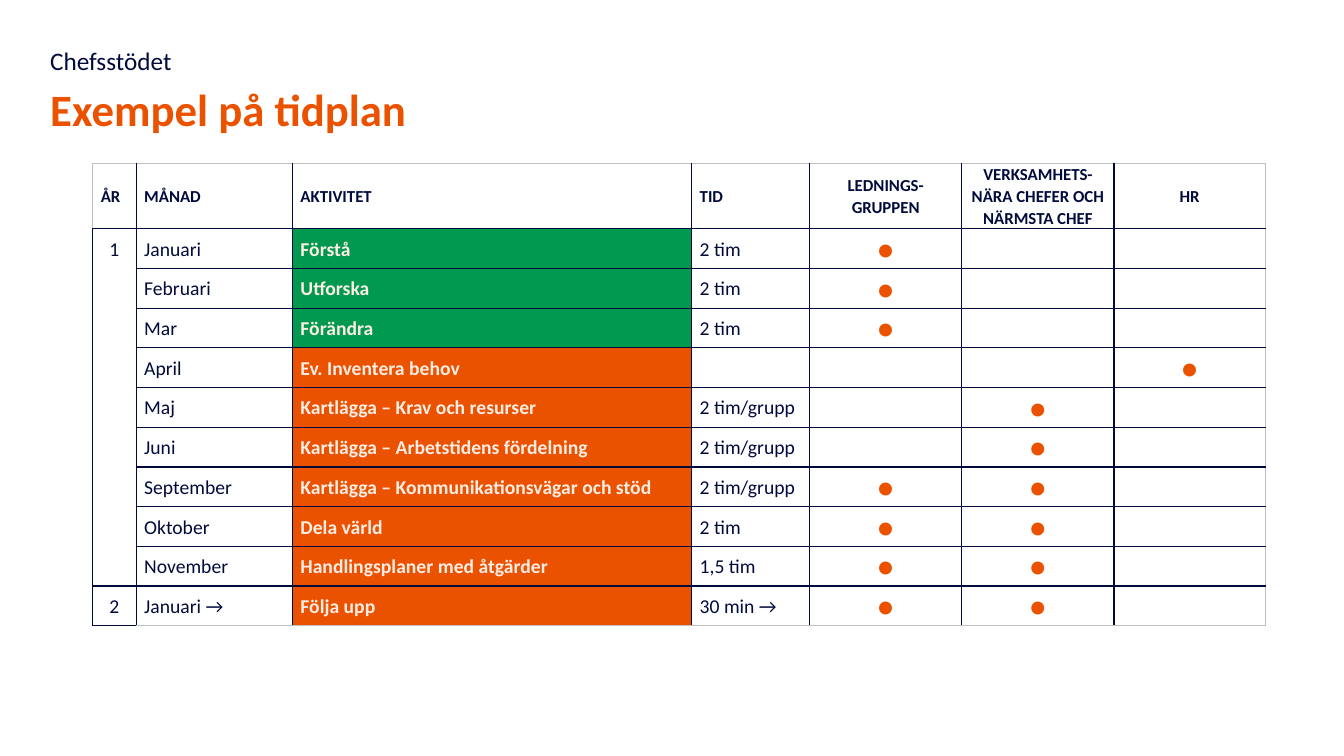
import pptx
import pptx.util
import pptx.dml.color
import pptx.enum.text
import pptx.oxml.ns
import lxml.etree

PX = 9144
NAVY, ORANGE, GREEN = "000B3C", "EB5200", "00994F"
CREAM, GREY = "FDEDE5", "BFBFBF"
FONT = "Calibri"
MID = pptx.enum.text.MSO_ANCHOR.MIDDLE
CENTER = pptx.enum.text.PP_ALIGN.CENTER

COLS = [43, 155, 396, 117, 151, 151, 150]
HEADS = ["ÅR", "MÅNAD", "AKTIVITET", "TID", "LEDNINGS-GRUPPEN",
         "VERKSAMHETS-NÄRA CHEFER OCH NÄRMSTA CHEF", "HR"]
# Year, month, activity, time, columns that carry a dot
PLAN = [
    ("1", "Januari", "Förstå", "2 tim", [4]),
    ("", "Februari", "Utforska", "2 tim", [4]),
    ("", "Mar", "Förändra", "2 tim", [4]),
    ("", "April", "Ev. Inventera behov", "", [6]),
    ("", "Maj", "Kartlägga – Krav och resurser", "2 tim/grupp", [5]),
    ("", "Juni", "Kartlägga – Arbetstidens fördelning", "2 tim/grupp", [5]),
    ("", "September", "Kartlägga – Kommunikationsvägar och stöd",
     "2 tim/grupp", [4, 5]),
    ("", "Oktober", "Dela värld", "2 tim", [4, 5]),
    ("", "November", "Handlingsplaner med åtgärder", "1,5 tim", [4, 5]),
    ("2", "Januari →", "Följa upp", "30 min →", [4, 5]),
]
LAST = len(PLAN)


def px(n):
    return pptx.util.Emu(round(n * PX))


def color(code):
    return pptx.dml.color.RGBColor.from_string(code)


def style(font, size, code, bold=False):
    font.name = FONT
    font.size = pptx.util.Pt(size)
    font.bold = bold
    font.color.rgb = color(code)


def label(slide, box, text, size, code, bold=False):
    shape = slide.shapes.add_textbox(*map(px, box))
    frame = shape.text_frame
    frame.word_wrap = True
    frame.text = text
    style(frame.paragraphs[0].runs[0].font, size, code, bold)


def edge(cell, side, code):
    """Draw one border; no colour means no line."""
    props = cell._tc.get_or_add_tcPr()
    qn = pptx.oxml.ns.qn
    width = 6350 if code == GREY else 12700
    line = lxml.etree.SubElement(props, qn("a:ln" + side), w=str(width))
    if code:
        fill = lxml.etree.SubElement(line, qn("a:solidFill"))
        lxml.etree.SubElement(fill, qn("a:srgbClr"), val=code)
    else:
        lxml.etree.SubElement(line, qn("a:noFill"))


def borders(cell, row, col):
    inner = col == 0 and 1 <= row < LAST - 1
    edge(cell, "L", GREY if row == 0 and col == 0 else NAVY)
    edge(cell, "R", GREY if col == len(COLS) - 1 else NAVY)
    edge(cell, "T", GREY if row == 0 else
         None if col == 0 and 1 < row < LAST else NAVY)
    edge(cell, "B", None if inner else
         GREY if row == LAST and col else NAVY)


def write(cell, text, size, code, bold, center):
    cell.vertical_anchor = MID
    cell.margin_left = cell.margin_right = px(8)
    cell.margin_top = cell.margin_bottom = 0
    cell.text_frame.text = text
    para = cell.text_frame.paragraphs[0]
    para.line_spacing = 1.07
    para.space_after = pptx.util.Pt(8)
    if center:
        para.alignment = CENTER
    if text:
        style(para.runs[0].font, size, code, bold)
    else:
        para.font.size = pptx.util.Pt(size)


def plan(slide, box, head):
    left, top, width, height = box
    shape = slide.shapes.add_table(LAST + 1, len(COLS), *map(px, box))
    table = shape.table
    table.first_row = table.horz_banding = False
    for col, wide in zip(table.columns, COLS):
        col.width = px(wide)
    for row in table.rows:
        row.height = px((height - head) / LAST)
    table.rows[0].height = px(head)

    # Every cell gets its words, borders and fill
    for r in range(LAST + 1):
        for c in range(len(COLS)):
            cell = table.cell(r, c)
            borders(cell, r, c)
            cell.fill.background()
            if r == 0:
                write(cell, HEADS[c], 12, NAVY, True, c > 3)
                continue
            item = PLAN[r - 1]
            if c > 3:
                dot = c in item[4]
                write(cell, "●" if dot else "", 20 if dot else 14,
                      ORANGE, False, True)
            elif c == 2:
                write(cell, item[c], 14, CREAM, True, False)
                cell.fill.solid()
                cell.fill.fore_color.rgb = color(GREEN if r < 4 else ORANGE)
            else:
                write(cell, item[c], 14, NAVY, False, c == 0)
    table.cell(LAST - 3, 0).merge(table.cell(LAST - 1, 0))


def header(slide, box):
    left, top, width, height = box
    small = 36
    label(slide, (left, top, width, small), "Chefsstödet", 18, NAVY)
    label(slide, (left, top + small, width, height - small),
          "Exempel på tidplan", 32, ORANGE, True)


def main():
    deck = pptx.Presentation()
    deck.slide_width, deck.slide_height = px(1333), px(750)
    slide = deck.slides.add_slide(deck.slide_layouts[6])
    header(slide, (40, 40, 1256, 115))
    plan(slide, (92, 162, 1163, 459), 65)
    deck.save("out.pptx")


if __name__ == "__main__":
    main()
